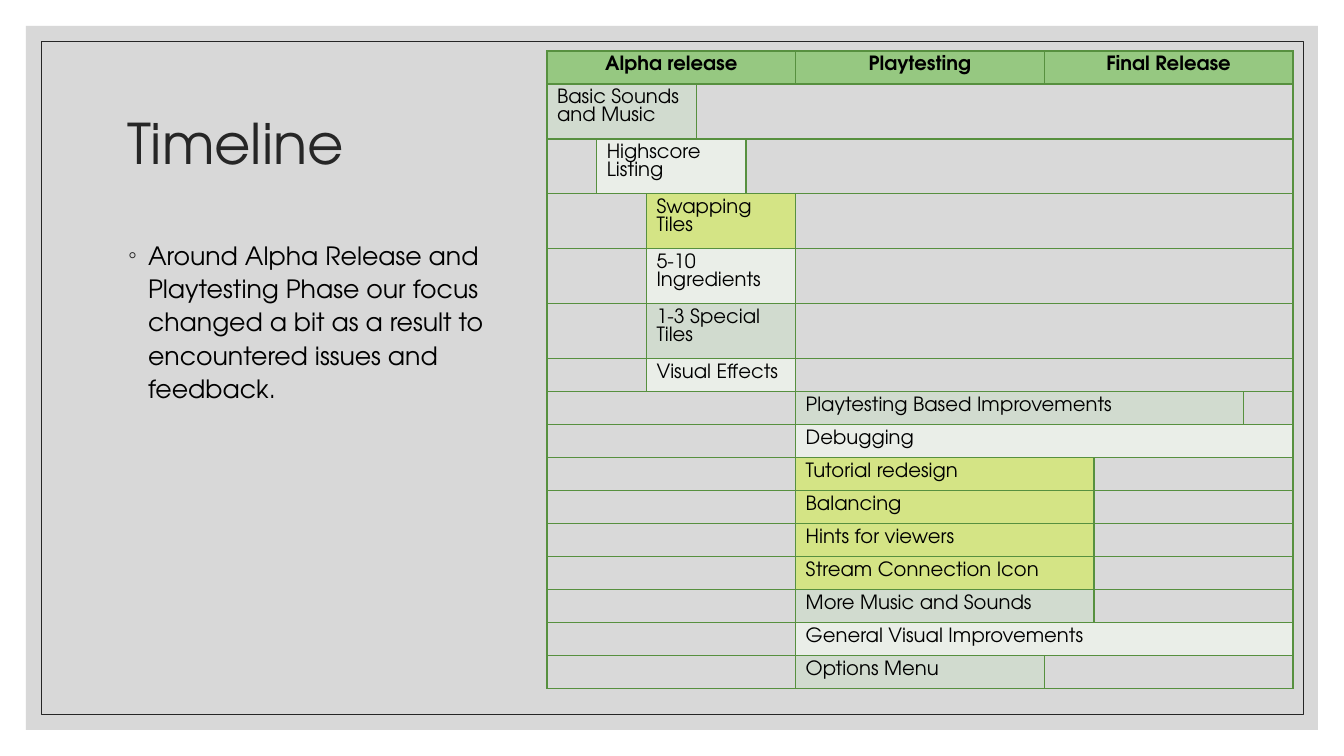
from lxml import etree
from pptx import Presentation
from pptx.dml.color import RGBColor
from pptx.enum.shapes import MSO_SHAPE
from pptx.enum.text import MSO_ANCHOR, PP_ALIGN
from pptx.oxml.ns import qn
from pptx.util import Pt

PX = 914400 / 100.8
FONT = "TeX Gyre Adventor"
RECTANGLE = MSO_SHAPE.RECTANGLE
MIDDLE, TOP = MSO_ANCHOR.MIDDLE, MSO_ANCHOR.TOP
LEFT, CENTER = PP_ALIGN.LEFT, PP_ALIGN.CENTER
COLORS = {
    "backdrop": "BFBFBF", "dark": "262626", "black": "000000", "border": "57903F",
    "header": "96C881", "empty": "D9D9D9", "sage": "D1DBCF", "pale": "EAEEE8",
    "lime": "D4E485",
}


def px(*lengths):
    return [round(length * PX) for length in lengths]


def add_text(para, text, size, color, bold=False):
    span = para.add_run()
    span.text = text
    span.font.name = FONT
    span.font.size = Pt(size)
    span.font.bold = bold
    span.font.color.rgb = RGBColor.from_string(COLORS[color])


deck = Presentation()
deck.slide_width, deck.slide_height = px(1344, 756)
page = deck.slides.add_slide(deck.slide_layouts[1])
title, body = page.placeholders

# Backdrop and thin frame, behind the placeholders
backdrop = page.shapes.add_shape(RECTANGLE, *px(26, 26, 1292, 704))
backdrop.fill.solid()
backdrop.fill.fore_color.rgb = RGBColor.from_string(COLORS["backdrop"])
fill_color = backdrop.fill._xPr.find(qn("a:solidFill"))[0]
etree.SubElement(fill_color, qn("a:alpha"), val="60000")
backdrop.line.fill.background()
frame = page.shapes.add_shape(RECTANGLE, *px(41, 41, 1262, 673))
frame.fill.background()
frame.line.color.rgb = RGBColor.from_string(COLORS["dark"])
frame.line.width = Pt(0.5)
for index, box in enumerate((backdrop, frame)):
    box.shadow.inherit = False
    page.shapes._spTree.insert(2 + index, box._element)

# Title and bullet
title.left, title.top, title.width, title.height = px(117, 71, 1109, 151)
title.text_frame.vertical_anchor = MIDDLE
para = title.text_frame.paragraphs[0]
para.alignment = LEFT
para.line_spacing = 0.9
add_text(para, "Timeline", 40, "dark")

body.left, body.top, body.width, body.height = px(118, 232, 418, 413)
body.text_frame.vertical_anchor = TOP
para = body.text_frame.paragraphs[0]
para.line_spacing = 1.1
para.space_before = Pt(9)
add_text(
    para,
    "Around Alpha Release and Playtesting Phase our focus changed a bit "
    "as a result to encountered issues and feedback.",
    18, "black",
)
properties = para._p.get_or_add_pPr()
indent = px(20)[0]
properties.set("marL", str(indent))
properties.set("indent", str(-indent))
bullet_color = etree.SubElement(properties, qn("a:buClr"))
etree.SubElement(bullet_color, qn("a:srgbClr"), val=COLORS["dark"])
etree.SubElement(properties, qn("a:buChar"), char="◦")

# Timeline table: each task is text, first column, column count, fill
COLUMN_UNITS = [1, 1, 1, 1, 1, 5, 1, 3, 1]
TABLE_WIDTH, ROW, TALL_ROW = 746, 33, 55
HEADERS = [("Alpha release", 0, 5), ("Playtesting", 5, 1), ("Final Release", 6, 3)]
TASKS = [
    ("Basic Sounds and Music", 0, 3, "sage"),
    ("Highscore Listing", 1, 3, "pale"),
    ("Swapping Tiles", 2, 3, "lime"),
    ("5-10 Ingredients", 2, 3, "pale"),
    ("1-3 Special Tiles", 2, 3, "sage"),
    ("Visual Effects", 2, 3, "pale"),
    ("Playtesting Based Improvements", 5, 3, "sage"),
    ("Debugging", 5, 4, "pale"),
    ("Tutorial redesign", 5, 2, "lime"),
    ("Balancing", 5, 2, "lime"),
    ("Hints for viewers", 5, 2, "lime"),
    ("Stream Connection Icon", 5, 2, "lime"),
    ("More Music and Sounds", 5, 2, "sage"),
    ("General Visual Improvements", 5, 4, "pale"),
    ("Options Menu", 5, 1, "sage"),
]
row_heights = [ROW] + [TALL_ROW] * 5 + [ROW] * 10
column_count = len(COLUMN_UNITS)
table = page.shapes.add_table(
    len(row_heights), column_count, *px(547, 51, TABLE_WIDTH, sum(row_heights))
).table
table.first_row = table.horz_banding = False
for column, units in zip(table.columns, COLUMN_UNITS):
    column.width = px(TABLE_WIDTH * units / sum(COLUMN_UNITS))[0]
for row, height in zip(table.rows, row_heights):
    row.height = px(height)[0]

for cell in table.iter_cells():
    cell.fill.solid()
    cell.fill.fore_color.rgb = RGBColor.from_string(COLORS["empty"])
    cell_properties = cell._tc.get_or_add_tcPr()
    for index, side in enumerate(("lnL", "lnR", "lnT", "lnB")):
        edge = etree.Element(qn("a:" + side), w=str(Pt(1)))
        edge_fill = etree.SubElement(edge, qn("a:solidFill"))
        etree.SubElement(edge_fill, qn("a:srgbClr"), val=COLORS["border"])
        cell_properties.insert(index, edge)
    para = cell.text_frame.paragraphs[0]
    end_format = etree.SubElement(para._p, qn("a:endParaRPr"), sz="1400")
    etree.SubElement(end_format, qn("a:latin"), typeface=FONT)

segments = [(0, text, start, count, "header") for text, start, count in HEADERS]
for row_index, (text, start, count, color) in enumerate(TASKS, 1):
    end = start + count
    segments += [
        (row_index, "", 0, start, "empty"),
        (row_index, text, start, count, color),
        (row_index, "", end, column_count - end, "empty"),
    ]
for row_index, text, start, count, color in segments:
    if count == 0:
        continue
    cell = table.cell(row_index, start)
    if count > 1:
        cell.merge(table.cell(row_index, start + count - 1))
    cell.fill.fore_color.rgb = RGBColor.from_string(COLORS[color])
    if text:
        is_header = color == "header"
        para = cell.text_frame.paragraphs[0]
        para.alignment = CENTER if is_header else LEFT
        add_text(para, text, 14, "black", bold=is_header)

deck.save("out.pptx")
